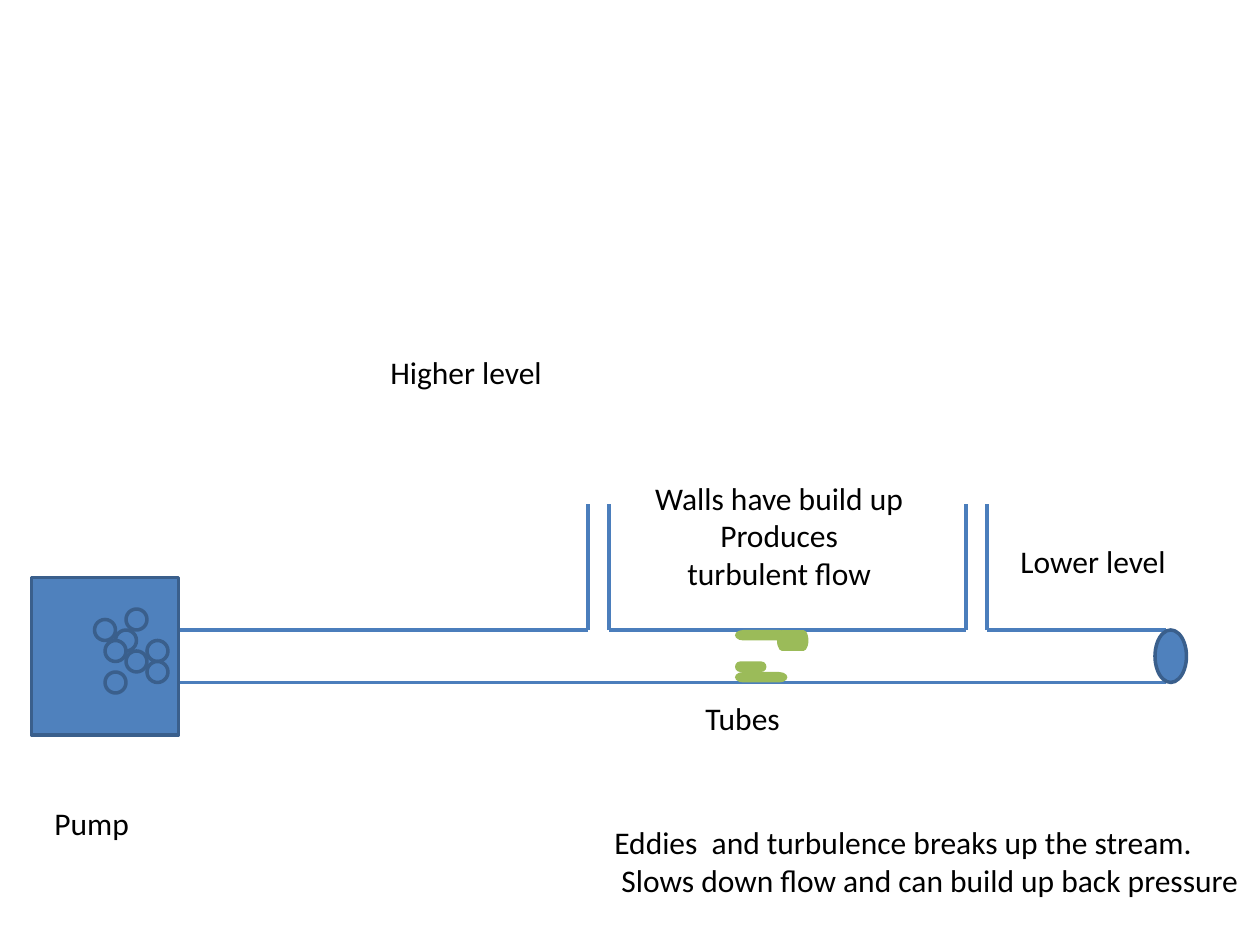
"""Build a slide of a pump feeding a tube with wall build-up and two level pipes."""
import pptx
import pptx.chart.data
import pptx.dml.color
import pptx.enum.shapes
import pptx.enum.text
import pptx.oxml
import pptx.util
import lxml.etree

Pt = pptx.util.Pt
SHAPE = pptx.enum.shapes.MSO_SHAPE
ALIGN = pptx.enum.text.PP_ALIGN
BLUE, EDGE, PIPE, GREEN = "4F81BD", "3A5F8C", "4B7EBC", "9BBB59"
TOP, BOTTOM = 360, 390

deck = pptx.Presentation()
deck.slide_width, deck.slide_height = Pt(720), Pt(540)
page = deck.slides.add_slide(deck.slide_layouts[6])


def color(value):
    return pptx.dml.color.RGBColor.from_string(value)


def add_text(text, left, top, width, height, size=18, font="Calibri", ink="000000", align=ALIGN.LEFT):
    box = page.shapes.add_textbox(Pt(left), Pt(top), Pt(width), Pt(height))
    frame = box.text_frame
    frame.word_wrap = False
    frame.auto_size = pptx.enum.text.MSO_AUTO_SIZE.SHAPE_TO_FIT_TEXT
    frame.text = text
    for para in frame.paragraphs:
        para.alignment = align
        for span in para.runs:
            span.font.size = Pt(size)
            span.font.name = font
            span.font.color.rgb = color(ink)


pipes = [
    (102, TOP, 336, TOP),
    (102, BOTTOM, 666, BOTTOM),
    (564, TOP, 666, TOP),
    (348, TOP, 552, TOP),
]
pipes += [(x, TOP, x, 288) for x in (336, 348, 564, 552)]
for ends in pipes:
    pipe = page.shapes.add_connector(
        pptx.enum.shapes.MSO_CONNECTOR.STRAIGHT, *[Pt(value) for value in ends])
    pipe.line.color.rgb = color(PIPE)
    pipe.line.width = Pt(2.25)
    lxml.etree.SubElement(pipe._element.spPr, pptx.oxml.ns.qn("a:effectLst"))

bubbles = [(84, 366), (66, 360), (54, 354), (72, 348), (60, 384), (60, 366), (84, 378), (72, 372)]
solids = [
    (SHAPE.OVAL, 660, TOP, 18, 30, BLUE),
    (SHAPE.RECTANGLE, 18, 330, 84, 90, BLUE),
]
solids += [(SHAPE.OVAL, x, y, 12, 12, BLUE) for x, y in bubbles]
solids += [
    (SHAPE.FLOWCHART_TERMINATOR, 420, 384, 30, 6, GREEN),
    (SHAPE.FLOWCHART_TERMINATOR, 420, TOP, 30, 6, GREEN),
    (SHAPE.FLOWCHART_TERMINATOR, 420, 378, 18, 6, GREEN),
    (SHAPE.FLOWCHART_TERMINATOR, 444, TOP, 18, 12, GREEN),
]
for kind, left, top, width, height, fill in solids:
    solid = page.shapes.add_shape(kind, Pt(left), Pt(top), Pt(width), Pt(height))
    solid.shadow.inherit = False
    solid.fill.solid()
    solid.fill.fore_color.rgb = color(fill)
    if fill == BLUE:
        solid.line.color.rgb = color(EDGE)
        solid.line.width = Pt(2)
    else:
        solid.line.fill.background()

add_text("Pump", 24, 456, 57.5, 29)
add_text("Tubes", 396, 396, 57.5, 29)
add_text("Walls have build up\nProduces\nturbulent flow", 366, 270, 158.5, 94, align=ALIGN.CENTER)
add_text("Higher level", 216, 198, 102, 29)
add_text("Lower level", 576, 306, 98.5, 29)
add_text("Eddies  and turbulence breaks up the stream.\n Slows down flow and can build up back pressure",
         344, 467, 376, 73)

deck.save("out.pptx")
